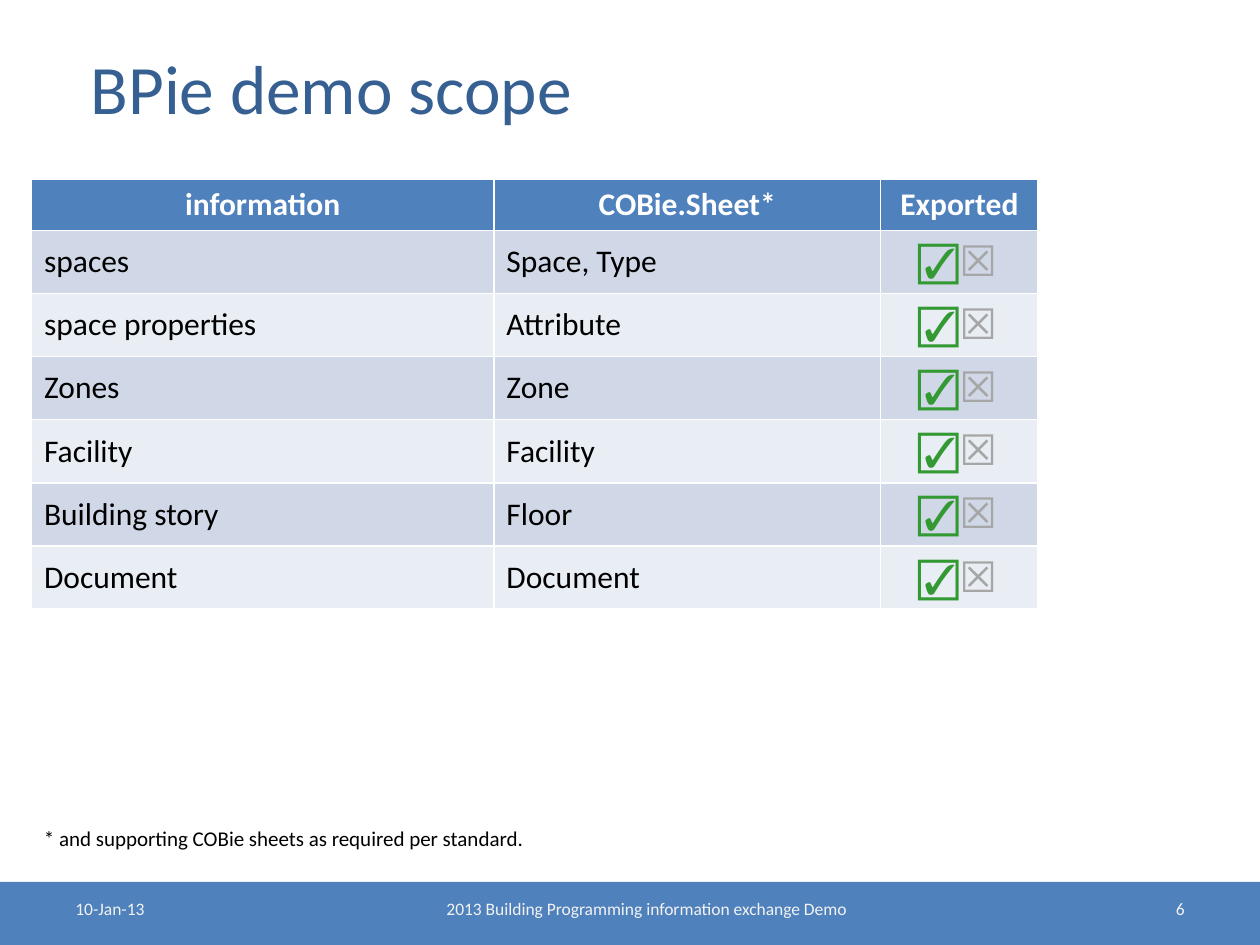
from pptx import Presentation
from pptx import util as u
from pptx.dml.color import RGBColor
from pptx.enum import shapes, text

BLUE, WHITE, BLACK = "4F81BD", "FFFFFF", "000000"
BANDS = ["D0D8E8", "E9EDF4"]
GREEN, GREY, PALE, TITLE_BLUE = "339933", "A6A6A6", "F2F2F2", "376092"
LEFT, CENTER, RIGHT = text.PP_ALIGN.LEFT, text.PP_ALIGN.CENTER, text.PP_ALIGN.RIGHT
TOP, MIDDLE = text.MSO_ANCHOR.TOP, text.MSO_ANCHOR.MIDDLE

HEADINGS = ["information", "COBie.Sheet*", "Exported"]
SCOPE = [
    ("spaces", "Space, Type"),
    ("space properties", "Attribute"),
    ("Zones", "Zone"),
    ("Facility", "Facility"),
    ("Building story", "Floor"),
    ("Document", "Document"),
]


def rgb(value):
    return RGBColor.from_string(value)


class SlideBuilder:
    font = "Calibri"

    def __init__(self, slide):
        self.slide = slide

    def style(self, run, size, color, bold=False):
        run.font.name = self.font
        run.font.size = u.Pt(size)
        run.font.bold = bold
        run.font.color.rgb = rgb(color)

    def label(self, box, words, size, color, align=LEFT, anchor=TOP, wrap=True):
        label = self.slide.shapes.add_textbox(*map(u.Inches, box))
        frame = label.text_frame
        frame.word_wrap = wrap
        frame.vertical_anchor = anchor
        frame.text = words
        paragraph = frame.paragraphs[0]
        paragraph.alignment = align
        self.style(paragraph.runs[0], size, color)
        return label

    def band(self, box, color):
        band = self.slide.shapes.add_shape(
            shapes.MSO_SHAPE.RECTANGLE, *map(u.Inches, box))
        band.shadow.inherit = False
        band.fill.solid()
        band.fill.fore_color.rgb = rgb(color)
        band.line.fill.background()

    def cell(self, cell, fill, words, align=LEFT, anchor=MIDDLE):
        cell.fill.solid()
        cell.fill.fore_color.rgb = rgb(fill)
        cell.vertical_anchor = anchor
        paragraph = cell.text_frame.paragraphs[0]
        paragraph.alignment = align
        for word, size, color, bold in words:
            run = paragraph.add_run()
            run.text = word
            self.style(run, size, color, bold)

    def scope_table(self, left, top, widths, row_height):
        count = len(SCOPE) + 1
        table = self.slide.shapes.add_table(
            count, len(widths), u.Inches(left), u.Inches(top),
            u.Inches(sum(widths)), u.Inches(row_height * count)).table
        for column, width in zip(table.columns, widths):
            column.width = u.Inches(width)
        for row in table.rows:
            row.height = u.Inches(row_height)
        for col, heading in enumerate(HEADINGS):
            self.cell(table.cell(0, col), BLUE, [(heading, 18, WHITE, True)], CENTER, TOP)
        marks = [("☑", 24, GREEN, True), ("☒", 24, GREY, True)]
        for row, entry in enumerate(SCOPE, 1):
            fill = BANDS[(row - 1) % 2]
            for col, words in enumerate(entry):
                self.cell(table.cell(row, col), fill, [(words, 18, BLACK, False)])
            self.cell(table.cell(row, 2), fill, marks, CENTER)


def main():
    deck = Presentation()
    deck.slide_width, deck.slide_height = u.Inches(10), u.Inches(7.5)
    builder = SlideBuilder(deck.slides.add_slide(deck.slide_layouts[6]))

    title = builder.label((0.5, 0.3, 9, 0.78), "BPie demo scope", 39.6, TITLE_BLUE,
                          anchor=MIDDLE)
    title.text_frame.margin_left = u.Inches(0.22)
    builder.scope_table(0.25, 1.42, [3.67, 3.07, 1.25], 0.41)

    builder.band((0, 7, 10, 0.5), BLUE)
    for left, width, words, align in [
        (2.92, 4.42, "2013 Building Programming information exchange Demo", CENTER),
        (7.17, 2.33, "6", RIGHT),
        (0.5, 2.33, "10-Jan-13", LEFT),
    ]:
        builder.label((left, 7.08, width, 0.27), words, 10, PALE, align)
    builder.label((0.25, 6.5, 4.05, 0.3),
                  "* and supporting COBie sheets as required per standard.",
                  12, BLACK, wrap=False)
    deck.save("out.pptx")


if __name__ == "__main__":
    main()
